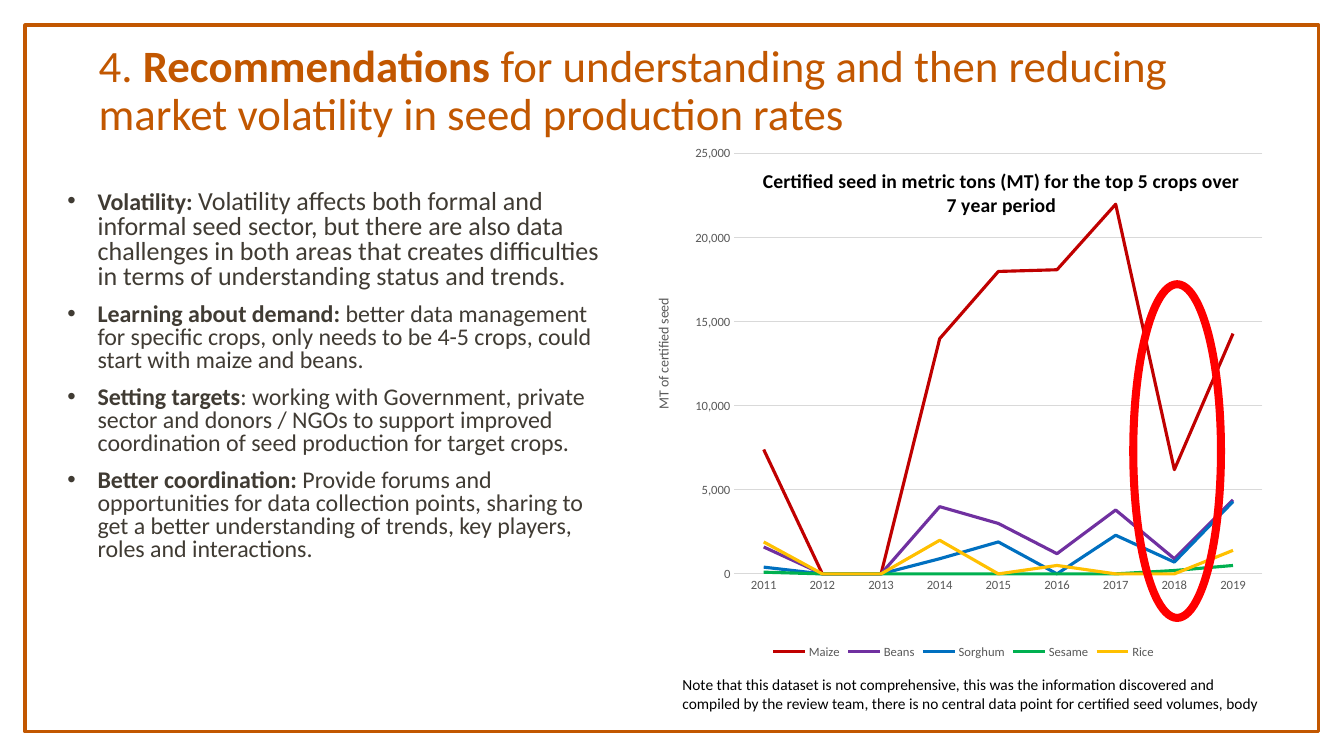
from lxml.etree import SubElement
from pptx import Presentation
from pptx.chart.data import CategoryChartData
from pptx.dml.color import RGBColor
from pptx.enum.chart import XL_CHART_TYPE as ChartType, XL_LEGEND_POSITION as LegendPosition
from pptx.enum.chart import XL_TICK_MARK as TickMark
from pptx.enum.shapes import MSO_SHAPE as Shape
from pptx.enum.text import MSO_ANCHOR as Anchor
from pptx.oxml.ns import qn
from pptx.util import Inches, Pt

FONT = "Calibri"
RUST = RGBColor(0xC2, 0x57, 0x00)
BROWN = RGBColor(0x40, 0x3B, 0x33)
BLACK = RGBColor(0x00, 0x00, 0x00)
GRAY = RGBColor(0x59, 0x59, 0x59)
LIGHT_GRAY = RGBColor(0xD9, 0xD9, 0xD9)
RED = RGBColor(0xFF, 0x00, 0x00)

HEADING = [
    ("4. ", 32, False),
    ("Recommendations", 32, True),
    (" for understanding and then reducing market volatility in seed production rates", 32, False),
]
RECOMMENDATIONS = [
    ("Volatility: ", "Volatility affects both formal and informal seed sector, but there are also data "
     "challenges in both areas that creates difficulties in terms of understanding status and trends.", 18.6),
    ("Learning about demand: ", "better data management for specific crops, only needs to be 4-5 crops, "
     "could start with maize and beans.", 17.1),
    ("Setting targets", ": working with Government, private sector and donors / NGOs to support improved "
     "coordination of seed production for target crops.", 17.1),
    ("Better coordination: ", "Provide forums and opportunities for data collection points, sharing to get "
     "a better understanding of trends, key players, roles and interactions.", 17.1),
]
NOTE = [
    "Note that this dataset is not comprehensive, this was the information discovered and",
    "compiled by the review team, there is no central data point for certified seed volumes, body",
]
CHART_TITLE = ["Certified seed in metric tons (MT) for the top 5 crops over", "7 year period"]
YEARS = [str(year) for year in range(2011, 2020)]
CROPS = [
    ("Maize", RGBColor(0xC0, 0x00, 0x00), (7400, 0, 0, 14000, 18000, 18100, 22000, 6200, 14300)),
    ("Beans", RGBColor(0x70, 0x30, 0xA0), (1600, 0, 0, 4000, 3000, 1200, 3800, 900, 4400)),
    ("Sorghum", RGBColor(0x00, 0x70, 0xC0), (400, 0, 0, 900, 1900, 0, 2300, 700, 4300)),
    ("Sesame", RGBColor(0x00, 0xB0, 0x50), (100, 0, 0, 0, 0, 0, 0, 200, 500)),
    ("Rice", RGBColor(0xFF, 0xC0, 0x00), (1900, 0, 0, 2000, 0, 500, 0, 0, 1400)),
]


def style_font(font, size, color, bold=False):
    """Set typeface, size, colour and weight of a font."""
    font.name, font.size, font.bold = FONT, Pt(size), bold
    font.color.rgb = color


def fill_paragraphs(frame, paragraphs, color):
    """Write paragraphs of (text, size, bold) runs."""
    for index, runs in enumerate(paragraphs):
        paragraph = frame.add_paragraph() if index else frame.paragraphs[0]
        for text, size, bold in runs:
            run = paragraph.add_run()
            run.text = text
            style_font(run.font, size, color, bold)


def add_text(slide, box, paragraphs, color, wrap=True):
    """Add a text box and return its frame."""
    frame = slide.shapes.add_textbox(*map(Inches, box)).text_frame
    frame.word_wrap = wrap
    fill_paragraphs(frame, paragraphs, color)
    return frame


def add_outline(slide, preset, box, color, width):
    """Add an unfilled preset shape."""
    outline = slide.shapes.add_shape(preset, *map(Inches, box))
    outline.shadow.inherit = False
    outline.fill.background()
    outline.line.color.rgb = color
    outline.line.width = Pt(width)


def add_bullet(paragraph, color):
    """Give a paragraph a hanging coloured bullet."""
    properties = paragraph._p.get_or_add_pPr()
    properties.set("marL", str(Inches(0.3)))
    properties.set("indent", str(Inches(-0.3)))
    SubElement(SubElement(properties, qn("a:buClr")), qn("a:srgbClr")).set("val", str(color))
    SubElement(properties, qn("a:buFont")).set("typeface", "Arial")
    SubElement(properties, qn("a:buChar")).set("char", "•")


def add_recommendations(slide):
    """Add the bulleted recommendations."""
    paragraphs = [[(lead, 17.1, True), (detail, size, False)] for lead, detail, size in RECOMMENDATIONS]
    frame = add_text(slide, (0.57, 1.79, 5.58, 4.59), paragraphs, BROWN)
    frame.margin_top = frame.margin_bottom = Inches(0.1)
    for paragraph in frame.paragraphs:
        paragraph.line_spacing = 0.8
        paragraph.space_before = Pt(10)
        add_bullet(paragraph, BROWN)


def place(part, position, **settings):
    """Give a chart part a manual layout at a child position."""
    for previous in part.findall(qn("c:layout")):
        part.remove(previous)
    layout = part.makeelement(qn("c:layout"))
    part.insert(position, layout)
    manual = SubElement(layout, qn("c:manualLayout"))
    for tag, value in settings.items():
        SubElement(manual, qn(f"c:{tag}")).set("val", str(value))


def style_axis(axis):
    """Set the tick marks and label font shared by both axes."""
    axis.major_tick_mark = axis.minor_tick_mark = TickMark.NONE
    style_font(axis.tick_labels.font, 9, GRAY)


def style_axes(chart):
    """Format the year axis and the seed volume axis."""
    years, volumes = chart.category_axis, chart.value_axis
    style_axis(years)
    years.format.line.color.rgb = LIGHT_GRAY
    years.format.line.width = Pt(0.75)
    style_axis(volumes)
    volumes.minimum_scale, volumes.maximum_scale, volumes.major_unit = 0, 25000, 5000
    volumes.tick_labels.number_format = "#,##0"
    volumes.tick_labels.number_format_is_linked = False
    volumes.format.line.fill.background()
    gridline = volumes.major_gridlines.format.line
    gridline.color.rgb = LIGHT_GRAY
    gridline.width = Pt(0.75)
    fill_paragraphs(volumes.axis_title.text_frame, [[("MT of certified seed", 10, False)]], GRAY)
    place(volumes.axis_title.element, 1, xMode="edge", yMode="edge", x=0.01, y=0.3)


def add_seed_chart(slide):
    """Add the line chart of certified seed by crop."""
    data = CategoryChartData(number_format="#,##0")
    data.categories = YEARS
    for name, _, volumes in CROPS:
        data.add_series(name, volumes)
    box = map(Inches, (6.4, 1.37, 6.31, 5.21))
    chart = slide.shapes.add_chart(ChartType.LINE, *box, data).chart
    style_font(chart.font, 10, BLACK)
    chart.plots[0].vary_by_categories = False
    for series, (_, color, _) in zip(chart.plots[0].series, CROPS):
        series.smooth = False
        series.format.line.color.rgb = color
        series.format.line.width = Pt(2.25)
    style_axes(chart)
    chart.has_legend = True
    chart.legend.position = LegendPosition.BOTTOM
    chart.legend.include_in_layout = False
    style_font(chart.legend.font, 9, GRAY)
    title = chart.chart_title
    fill_paragraphs(title.text_frame, [[(line, 14, True)] for line in CHART_TITLE], BLACK)
    place(title.element, 1, xMode="edge", yMode="edge", x=0.18, y=0.05)
    title.element.find(qn("c:overlay")).set("val", "1")
    plot_area = chart.element.find(qn("c:chart")).find(qn("c:plotArea"))
    place(plot_area, 0, layoutTarget="inner", xMode="edge", yMode="edge", x=0.14, y=0.03, w=0.83, h=0.8)


def main():
    """Build and save the slide."""
    deck = Presentation()
    deck.slide_width, deck.slide_height = Inches(13.33), Inches(7.5)
    slide = deck.slides.add_slide(deck.slide_layouts[6])
    add_outline(slide, Shape.RECTANGLE, (0.25, 0.25, 12.83, 7.01), RUST, 2.5)
    heading = add_text(slide, (0.88, 0.04, 11.57, 1.45), [HEADING], RUST)
    heading.vertical_anchor = Anchor.BOTTOM
    heading.margin_top = heading.margin_bottom = Inches(0.1)
    heading.paragraphs[0].line_spacing = 0.9
    add_recommendations(slide)
    add_seed_chart(slide)
    add_outline(slide, Shape.OVAL, (11.24, 2.82, 0.87, 3.31), RED, 5.75)
    add_text(slide, (6.67, 6.65, 6.06, 0.47), [[(line, 11, False)] for line in NOTE], BLACK, wrap=False)
    deck.save("out.pptx")


if __name__ == "__main__":
    main()
